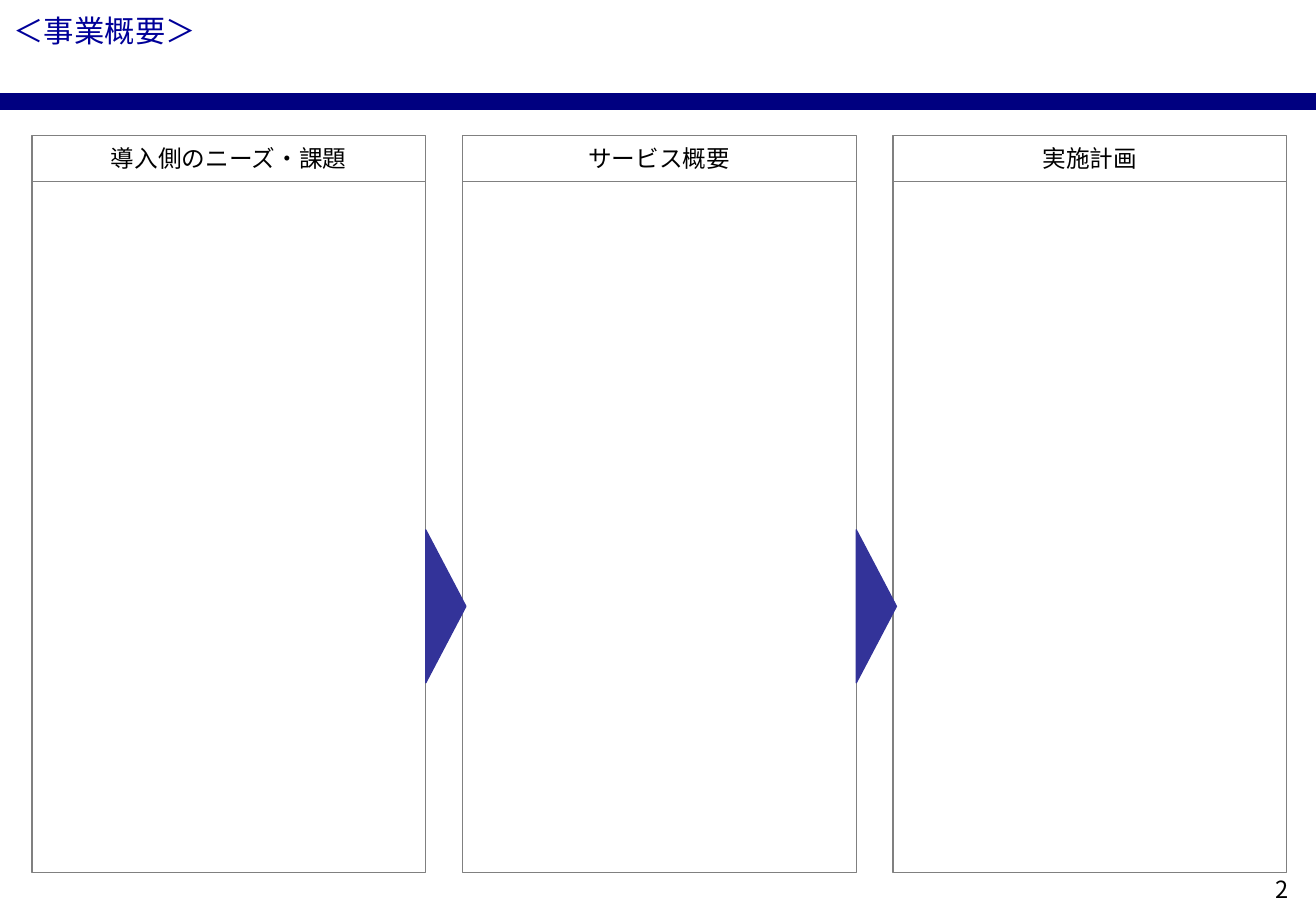
from lxml.etree import SubElement
from pptx import Presentation
from pptx.dml.color import RGBColor
from pptx.enum.shapes import MSO_CONNECTOR, MSO_SHAPE
from pptx.enum.text import MSO_ANCHOR, PP_ALIGN
from pptx.oxml.ns import qn
from pptx.util import Cm, Pt

FONT = "Noto Sans CJK JP"
SLIDE_W, SLIDE_H = 27.51, 19.05
COLUMNS = ["導入側のニーズ・課題", "サービス概要", "実施計画"]
COLUMN_W, COLUMN_PITCH = 8.23, 9.0
HEADER_H = 0.95
ARROW_W, ARROW_H = 0.84, 3.2


def rgb(value):
    return RGBColor.from_string(value)


def write(sp, text, size, color, align):
    tf = sp.text_frame
    frame_format = {"word_wrap": True, "vertical_anchor": MSO_ANCHOR.MIDDLE,
                    "margin_top": 0, "margin_bottom": 0}
    for name, value in frame_format.items():
        setattr(tf, name, value)
    p = tf.paragraphs[0]
    p.alignment = align
    r = p.add_run()
    r.text = text
    for name, value in {"size": Pt(size), "name": FONT, "bold": False}.items():
        setattr(r.font, name, value)
    r.font.color.rgb = rgb(color)
    SubElement(r.font._element, qn("a:ea"), typeface=FONT)


def add_box(slide, kind, x, y, w, h, line, fill=None):
    sp = slide.shapes.add_shape(kind, Cm(x), Cm(y), Cm(w), Cm(h))
    sp.shadow.inherit = False
    if fill:
        sp.fill.solid()
        sp.fill.fore_color.rgb = rgb(fill)
    else:
        sp.fill.background()
    sp.line.color.rgb = rgb(line)
    sp.line.width = Pt(0.75)
    return sp


def add_heading(slide, x, y, w, h):
    """Place the title and the thick rule beneath it."""
    title = slide.shapes.title
    place = {"left": x, "top": y, "width": w, "height": h}
    for name, value in place.items():
        setattr(title, name, Cm(value))
    write(title, "＜事業概要＞", 18, "000099", PP_ALIGN.LEFT)
    rule_y = Cm(y + 2.0)
    rule = slide.shapes.add_connector(
        MSO_CONNECTOR.STRAIGHT, 0, rule_y, Cm(SLIDE_W), rule_y)
    rule.line.color.rgb = rgb("000080")
    rule.line.width = Pt(10)
    SubElement(rule._element.spPr, qn("a:effectLst"))


def add_column(slide, heading, x, y, w, h):
    add_box(slide, MSO_SHAPE.RECTANGLE, x, y + HEADER_H, w, h - HEADER_H, "808080")
    header = add_box(slide, MSO_SHAPE.RECTANGLE, x, y, w, HEADER_H, "808080")
    write(header, heading, 14, "000000", PP_ALIGN.CENTER)


def add_arrow(slide, x, y, w, h):
    """Fill the box with a triangle turned to point right."""
    left, top = x + (w - h) / 2, y + (h - w) / 2
    sp = add_box(slide, MSO_SHAPE.ISOSCELES_TRIANGLE, left, top, h, w,
                 "333399", "333399")
    sp.rotation = 90


def add_columns(slide, x, y, h):
    for i, heading in enumerate(COLUMNS):
        add_column(slide, heading, x + i * COLUMN_PITCH, y, COLUMN_W, h)
    for i in range(len(COLUMNS) - 1):
        add_arrow(slide, x + i * COLUMN_PITCH + COLUMN_W, y + 8.24,
                  ARROW_W, ARROW_H)


def add_page_number(slide, x, y, w, h):
    sp = slide.shapes.add_textbox(Cm(x), Cm(y), Cm(w), Cm(h))
    write(sp, "2", 14, "000000", PP_ALIGN.CENTER)


def main():
    prs = Presentation()
    prs.slide_width, prs.slide_height = Cm(SLIDE_W), Cm(SLIDE_H)
    slide = prs.slides.add_slide(prs.slide_layouts[5])
    add_heading(slide, 0.03, 0.13, SLIDE_W - 0.03, 1.02)
    add_columns(slide, 0.67, 2.84, 15.4)
    add_page_number(slide, 26.11, 18.16, 1.4, 0.86)
    prs.save("out.pptx")


if __name__ == "__main__":
    main()
